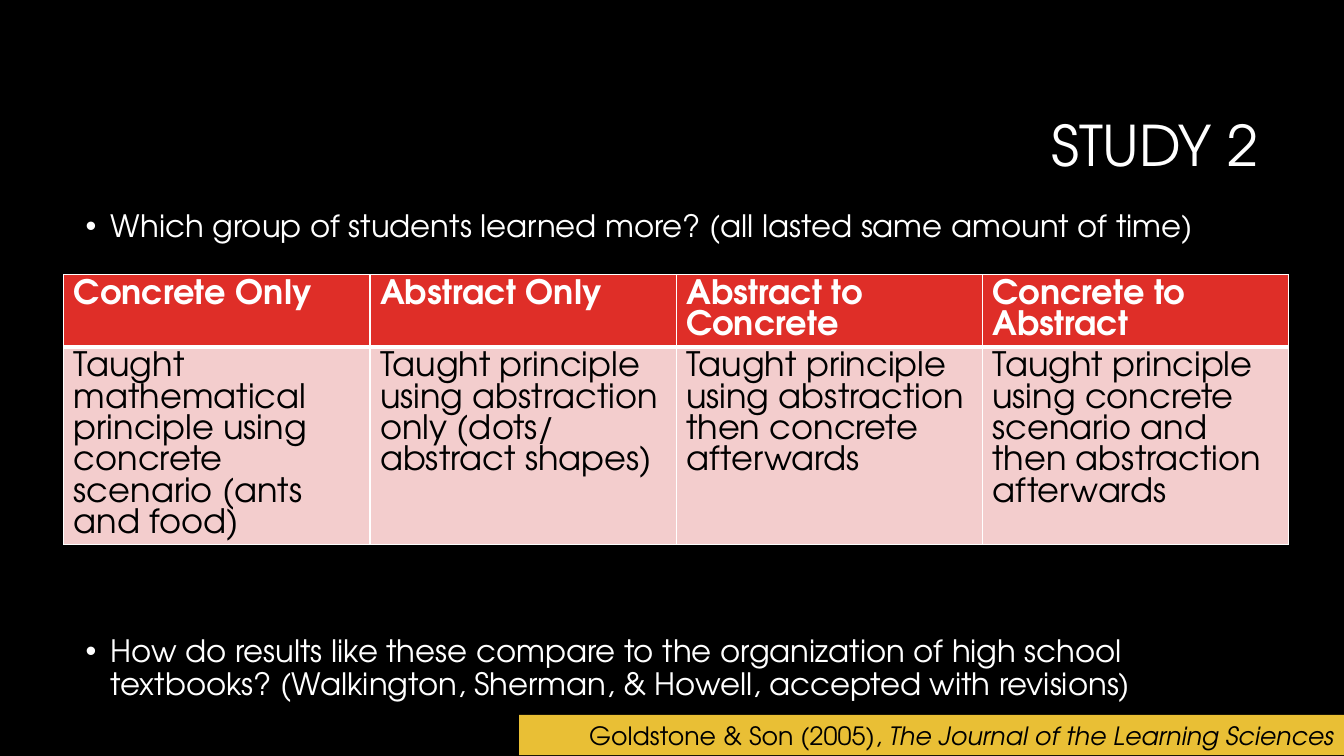
from dataclasses import dataclass

from lxml.etree import SubElement
from pptx import Presentation
from pptx.dml.color import RGBColor
from pptx.enum.shapes import MSO_SHAPE
from pptx.enum.text import MSO_ANCHOR, MSO_AUTO_SIZE, PP_ALIGN
from pptx.oxml.ns import qn
from pptx.slide import Slide
from pptx.table import _Cell
from pptx.text.text import _Paragraph
from pptx.util import Inches, Pt

# The slide is a grid of 160 columns by 90 rows
WIDTH, HEIGHT = Inches(13.33), Inches(7.5)
COLUMN, ROW = WIDTH / 160, HEIGHT / 90
FONT = "TeX Gyre Adventor"
COLORS = {
    "background": "000000",
    "light": "FFFFFF",
    "dark": "000000",
    "header": "DF2E28",
    "cell": "F3CDCD",
    "citation": "E9BF35",
}


@dataclass(frozen=True)
class Area:
    column: float
    row: float
    columns: float
    rows: float

    def box(self) -> tuple[int, int, int, int]:
        return (round(self.column * COLUMN), round(self.row * ROW),
                round(self.columns * COLUMN), round(self.rows * ROW))


@dataclass(frozen=True)
class Condition:
    name: str
    teaching: str


@dataclass(frozen=True)
class Question:
    text: str
    space_before: float


TITLE_AREA = Area(38, 9.2, 113, 16.9)
BODY_AREA = Area(9, 24.5, 142, 62.8)
TABLE_AREA = Area(7.6, 32.7, 145.8, 32.1)
CITATION_AREA = Area(61.8, 85.1, 98.2, 4.8)
HEADER_ROWS = 8.6

QUESTIONS = [
    Question("Which group of students learned more? (all lasted same amount of time)", 0),
    Question("How do results like these compare to the organization of high school "
             "textbooks? (Walkington, Sherman, & Howell, accepted with revisions)", 280),
]
CONDITIONS = [
    Condition("Concrete Only",
              "Taught mathematical principle using concrete scenario (ants and food)"),
    Condition("Abstract Only",
              "Taught principle using abstraction only (dots/ abstract shapes)"),
    Condition("Abstract to Concrete",
              "Taught principle using abstraction then concrete afterwards"),
    Condition("Concrete to Abstract",
              "Taught principle using concrete scenario and then abstraction afterwards"),
]


def color(name: str) -> RGBColor:
    return RGBColor.from_string(COLORS[name])


def style(para: _Paragraph, size: float, ink: str, bold: bool = False) -> None:
    para.font.name = FONT
    para.font.size = Pt(size)
    para.font.bold = bold
    para.font.color.rgb = color(ink)


def add_bullet(para: _Paragraph) -> None:
    properties = para._p.get_or_add_pPr()
    properties.set("marL", str(Inches(0.25)))
    properties.set("indent", str(Inches(-0.25)))
    SubElement(properties, qn("a:buFont"), typeface="Arial")
    SubElement(properties, qn("a:buChar"), char="•")


def set_borders(cell: _Cell, bottom: float) -> None:
    properties = cell._tc.get_or_add_tcPr()
    widths = {"a:lnL": 1, "a:lnR": 1, "a:lnT": 1, "a:lnB": bottom}
    for position, (tag, width) in enumerate(widths.items()):
        line = SubElement(properties, qn(tag), w=str(Pt(width)))
        fill = SubElement(line, qn("a:solidFill"))
        SubElement(fill, qn("a:srgbClr"), val=COLORS["light"])
        properties.insert(position, line)


def fill_cell(cell: _Cell, text: str, fill: str, ink: str, header: bool) -> None:
    cell.fill.solid()
    cell.fill.fore_color.rgb = color(fill)
    cell.text = text
    style(cell.text_frame.paragraphs[0], 24, ink, header)
    set_borders(cell, 3 if header else 1)


def add_title(page: Slide) -> None:
    title = page.shapes.title
    title.left, title.top, title.width, title.height = TITLE_AREA.box()
    title.text = "STUDY 2"
    title.text_frame.vertical_anchor = MSO_ANCHOR.MIDDLE
    para = title.text_frame.paragraphs[0]
    para.alignment = PP_ALIGN.RIGHT
    para.line_spacing = 0.9
    style(para, 40, "light")


def add_questions(page: Slide) -> None:
    body = page.placeholders[1]
    body.left, body.top, body.width, body.height = BODY_AREA.box()
    frame = body.text_frame
    frame.auto_size = MSO_AUTO_SIZE.NONE
    frame.text = "\n".join(question.text for question in QUESTIONS)
    for para, question in zip(frame.paragraphs, QUESTIONS):
        para.line_spacing = 0.9
        para.space_before = Pt(question.space_before)
        add_bullet(para)
        style(para, 22, "light")


def add_conditions(page: Slide) -> None:
    table = page.shapes.add_table(2, len(CONDITIONS), *TABLE_AREA.box()).table
    table.horz_banding = False
    table.rows[0].height = round(HEADER_ROWS * ROW)
    table.rows[1].height = round((TABLE_AREA.rows - HEADER_ROWS) * ROW)
    for index, condition in enumerate(CONDITIONS):
        fill_cell(table.cell(0, index), condition.name, "header", "light", True)
        fill_cell(table.cell(1, index), condition.teaching, "cell", "dark", False)


def add_citation(page: Slide) -> None:
    bar = page.shapes.add_shape(MSO_SHAPE.RECTANGLE, *CITATION_AREA.box())
    bar.shadow.inherit = False
    bar.fill.solid()
    bar.fill.fore_color.rgb = color("citation")
    bar.line.fill.background()
    bar.text_frame.word_wrap = True
    bar.text_frame.vertical_anchor = MSO_ANCHOR.MIDDLE
    para = bar.text_frame.paragraphs[0]
    para.alignment = PP_ALIGN.RIGHT
    para.add_run().text = "Goldstone & Son (2005), "
    journal = para.add_run()
    journal.text = "The Journal of the Learning Sciences"
    journal.font.italic = True
    style(para, 18, "dark")


def main() -> None:
    deck = Presentation()
    deck.slide_width, deck.slide_height = WIDTH, HEIGHT
    page = deck.slides.add_slide(deck.slide_layouts[1])
    page.background.fill.solid()
    page.background.fill.fore_color.rgb = color("background")
    add_title(page)
    add_questions(page)
    add_conditions(page)
    add_citation(page)
    deck.save("out.pptx")


if __name__ == "__main__":
    main()
